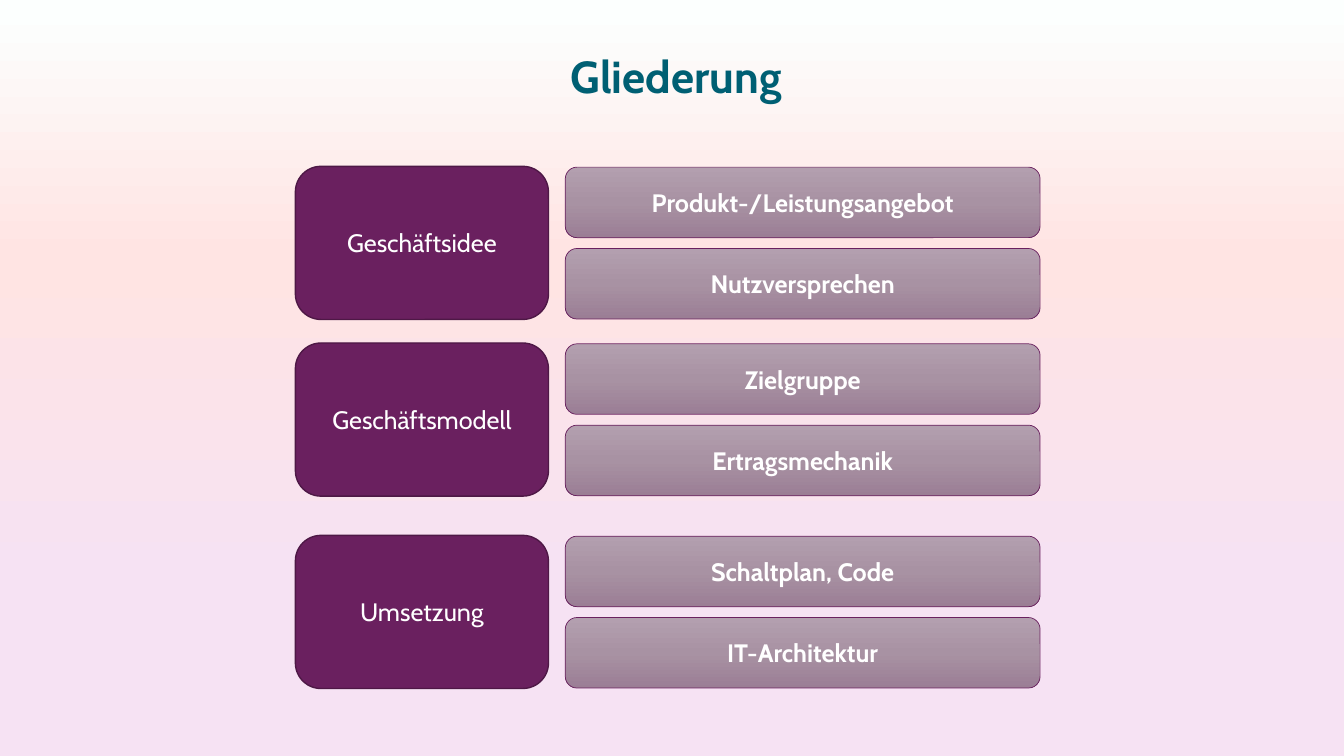
import lxml.etree
import pptx
import pptx.dml.color
import pptx.enum.shapes
import pptx.enum.text
import pptx.oxml.ns
import pptx.util

Pt = pptx.util.Pt
qn = pptx.oxml.ns.qn

COLORS = {
    "title": "005F73",
    "text": "FFFFFF",
    "section": "6A205F",
    "section_edge": "4E1846",
}
BACKGROUND_STOPS = [(8, "F6E2F3"), (23, "F6E2F3"), (66, "FFE4E3"), (99, "FCFFFE")]
TOPIC_STOPS = [(0, "B39FAF"), (50, "A892A3"), (100, "9B7E95")]

OUTLINE = [
    (118.8, "Geschäftsidee", ["Produkt-/Leistungsangebot", "Nutzversprechen"]),
    (245, "Geschäftsmodell", ["Zielgruppe", "Ertragsmechanik"]),
    (382.4, "Umsetzung", ["Schaltplan, Code", "IT-Architektur"]),
]
SECTION_LEFT, SECTION_WIDTH, SECTION_HEIGHT = 211, 180.8, 109.4
TOPIC_LEFT, TOPIC_WIDTH, TOPIC_HEIGHT = 403.8, 339.2, 50.4
TOPIC_INSET, TOPIC_STEP = 0.6, 58.1


def rgb(name):
    return pptx.dml.color.RGBColor.from_string(COLORS[name])


def apply_gradient(fill, owner, stops, angle):
    """Give fill, found inside the XML element owner, its stops; angle runs clockwise."""
    fill.gradient()
    fill.gradient_angle = 360 - angle
    stop_list = owner.find(".//" + qn("a:gsLst"))
    for default_stop in list(stop_list):
        stop_list.remove(default_stop)
    for percent, color in stops:
        stop = lxml.etree.SubElement(stop_list, qn("a:gs"), pos=str(percent * 1000))
        lxml.etree.SubElement(stop, qn("a:srgbClr"), val=color)


class OutlineSlide:
    font_name = "Cabin"

    def __init__(self, presentation):
        self.slide = presentation.slides.add_slide(presentation.slide_layouts[5])
        apply_gradient(self.slide.background.fill, self.slide._element,
                       BACKGROUND_STOPS, 270)

    def set_text(self, shape, text, size, color, bold, anchor):
        frame = shape.text_frame
        frame.word_wrap = True
        frame.auto_size = pptx.enum.text.MSO_AUTO_SIZE.NONE
        frame.vertical_anchor = anchor
        paragraph = frame.paragraphs[0]
        paragraph.text = text
        paragraph.alignment = pptx.enum.text.PP_ALIGN.CENTER
        font = paragraph.font
        font.name, font.size, font.bold = self.font_name, Pt(size), bold
        font.color.rgb = rgb(color)

    def title(self, text, left, top, width, height):
        heading = self.slide.shapes.title
        heading.left, heading.top = Pt(left), Pt(top)
        heading.width, heading.height = Pt(width), Pt(height)
        self.set_text(heading, text, 32, "title", True,
                      pptx.enum.text.MSO_ANCHOR.BOTTOM)

    def rounded_box(self, text, left, top, width, height, edge, edge_width, bold):
        box = self.slide.shapes.add_shape(
            pptx.enum.shapes.MSO_SHAPE.ROUNDED_RECTANGLE,
            Pt(left), Pt(top), Pt(width), Pt(height))
        box.shadow.inherit = False
        box.line.color.rgb = rgb(edge)
        box.line.width = Pt(edge_width)
        self.set_text(box, text, 18, "text", bold,
                      pptx.enum.text.MSO_ANCHOR.MIDDLE)
        return box

    def section(self, text, top):
        box = self.rounded_box(text, SECTION_LEFT, top, SECTION_WIDTH,
                               SECTION_HEIGHT, "section_edge", 1, False)
        box.fill.solid()
        box.fill.fore_color.rgb = rgb("section")

    def topic(self, text, top):
        box = self.rounded_box(text, TOPIC_LEFT, top, TOPIC_WIDTH,
                               TOPIC_HEIGHT, "section", 0.5, True)
        apply_gradient(box.fill, box._element, TOPIC_STOPS, 90)


def main():
    presentation = pptx.Presentation()
    presentation.slide_width, presentation.slide_height = Pt(960), Pt(540)
    outline = OutlineSlide(presentation)
    outline.title("Gliederung", 309.6, 5.8, 347, 71.2)
    for top, section, topics in OUTLINE:
        outline.section(section, top)
        for row, topic in enumerate(topics):
            outline.topic(topic, top + TOPIC_INSET + row * TOPIC_STEP)
    presentation.save("out.pptx")


if __name__ == "__main__":
    main()
